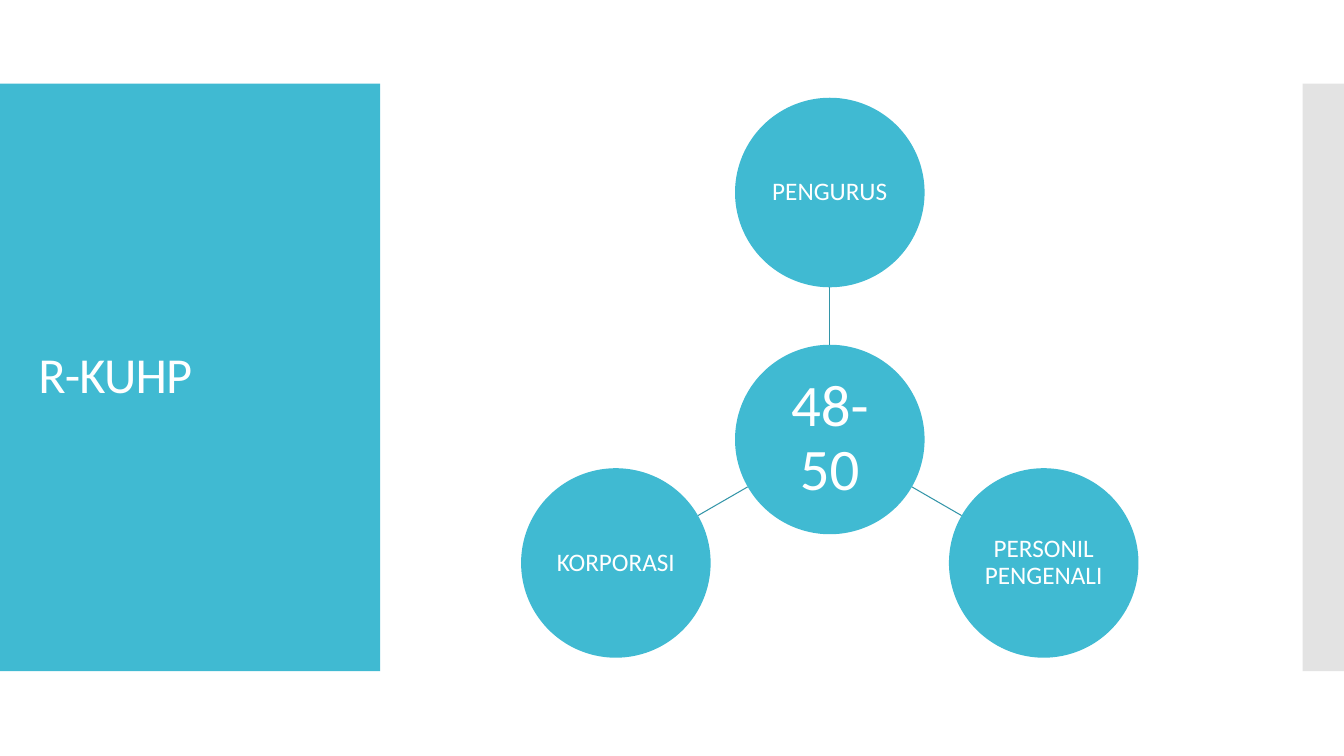
from math import cos, radians, sin

from lxml import etree
from pptx import Presentation
from pptx.dml.color import RGBColor
from pptx.enum import shapes, text
from pptx.oxml.ns import qn
from pptx.util import Inches, Pt

TEAL = RGBColor(0x40, 0xBA, 0xD2)
DARK_TEAL = RGBColor(0x33, 0x95, 0xA8)
GREY = RGBColor(0xC8, 0xC8, 0xC8)
WHITE = RGBColor(0xFF, 0xFF, 0xFF)

HUB_X, HUB_Y = 8.23, 4.36
RADIUS = 0.94
ORBIT = 2.45
SUBJECTS = ["PENGURUS", "PERSONIL PENGENALI", "KORPORASI"]


def add_filled(slide, preset, left, top, width, height, color):
    shape = slide.shapes.add_shape(
        preset, Inches(left), Inches(top), Inches(width), Inches(height))
    shape.shadow.inherit = False
    shape.fill.solid()
    shape.fill.fore_color.rgb = color
    shape.line.fill.background()
    return shape


def add_band(slide, left, width, color):
    return add_filled(slide, shapes.MSO_SHAPE.RECTANGLE,
                      left, 0.83, width, 5.83, color)


def set_opacity(shape, percent):
    color = shape.fill._xPr.find(qn("a:solidFill"))[0]
    etree.SubElement(color, qn("a:alpha"), val=str(percent * 1000))


def write(shape, words, size, align, inset):
    frame = shape.text_frame
    frame.text = words
    settings = {"word_wrap": True, "auto_size": text.MSO_AUTO_SIZE.NONE,
                "vertical_anchor": text.MSO_ANCHOR.MIDDLE}
    for side in ("left", "top", "right", "bottom"):
        settings[f"margin_{side}"] = Inches(inset)
    for name, value in settings.items():
        setattr(frame, name, value)
    paragraph = frame.paragraphs[0]
    paragraph.alignment = align
    paragraph.line_spacing = 0.9
    run = paragraph.runs[0]
    run.font.name = "Calibri"
    run.font.size = Pt(size)
    run.font.color.rgb = WHITE
    return run


def add_title(slide, words):
    title = slide.shapes.title
    place = {"left": 0.28, "top": 1.23, "width": 3.22, "height": 5.03}
    for name, value in place.items():
        setattr(title, name, Inches(value))
    run = write(title, words, 36, text.PP_ALIGN.LEFT, 0.1)
    run.font._element.set("spc", "-60")
    title._element.getparent().append(title._element)  # above the bands


def add_circle(slide, x, y, words, size, inset):
    circle = add_filled(slide, shapes.MSO_SHAPE.OVAL, x - RADIUS, y - RADIUS,
                        2 * RADIUS, 2 * RADIUS, TEAL)
    write(circle, words, size, text.PP_ALIGN.CENTER, inset)


def around_hub(distance, angle):
    """Point at a distance from the hub, with the angle clockwise from the top."""
    turn = radians(angle)
    return HUB_X + distance * sin(turn), HUB_Y - distance * cos(turn)


def add_spoke(slide, angle):
    start = around_hub(RADIUS, angle)
    end = around_hub(ORBIT - RADIUS, angle)
    spoke = slide.shapes.add_connector(
        shapes.MSO_CONNECTOR.STRAIGHT, *map(Inches, start + end))
    spoke.line.color.rgb = DARK_TEAL
    spoke.line.width = Pt(0.75)
    etree.SubElement(spoke._element.spPr, qn("a:effectLst"))


def main():
    deck = Presentation()
    deck.slide_width, deck.slide_height = Inches(13.33), Inches(7.5)
    slide = deck.slides.add_slide(deck.slide_layouts[5])

    add_band(slide, 0, 3.77, TEAL)
    set_opacity(add_band(slide, 12.92, 0.41, GREY), 50)
    add_title(slide, "R-KUHP")

    add_circle(slide, HUB_X, HUB_Y, "48-50", 42, 0.03)
    for index, subject in enumerate(SUBJECTS):
        angle = index * 360 / len(SUBJECTS)
        add_spoke(slide, angle)
        add_circle(slide, *around_hub(ORBIT, angle), subject, 18, 0.01)

    deck.save("out.pptx")


if __name__ == "__main__":
    main()
